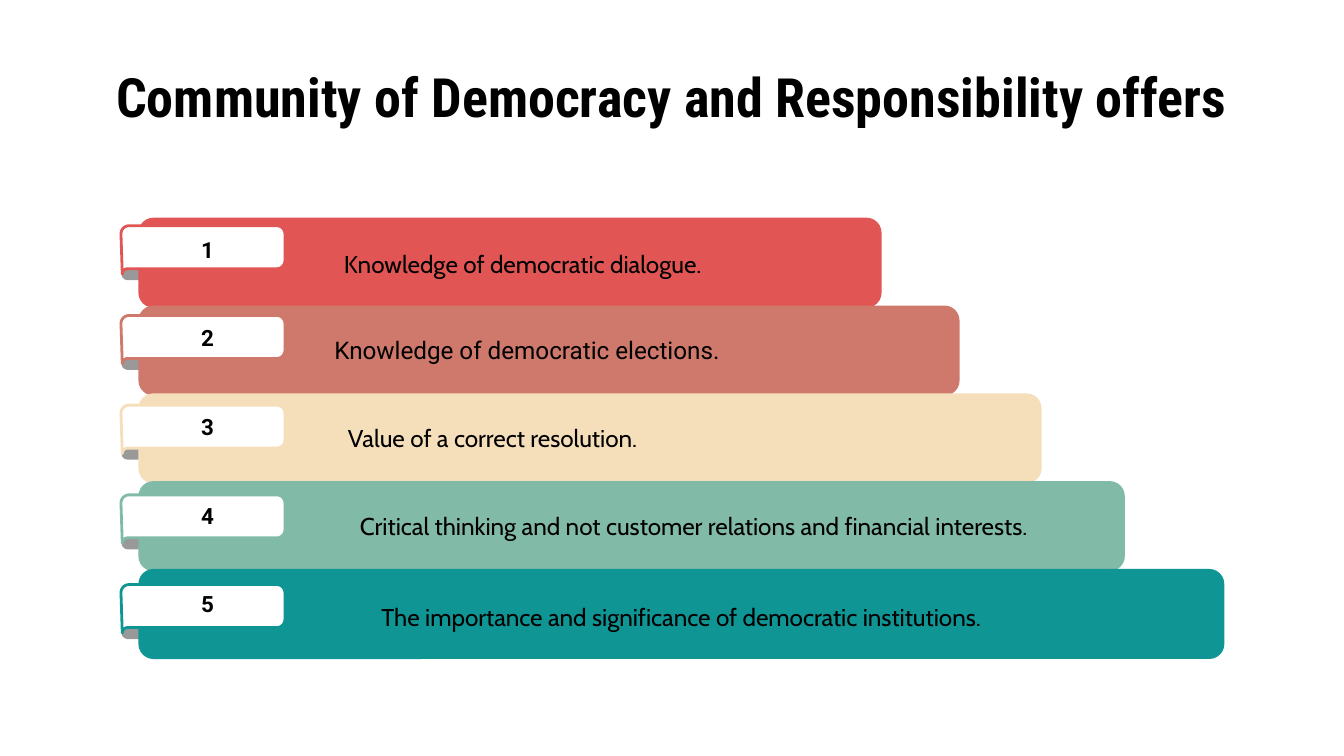
"""Build a slide of five widening, numbered bars under a title."""
from math import cos, radians, sin

from pptx import Presentation
from pptx.dml.color import RGBColor
from pptx.enum.shapes import MSO_SHAPE
from pptx.enum.text import MSO_ANCHOR, MSO_AUTO_SIZE, PP_ALIGN
from pptx.util import Emu, Pt

ROUNDED = MSO_SHAPE.ROUNDED_RECTANGLE
MIDDLE = MSO_ANCHOR.MIDDLE
NO_AUTOFIT = MSO_AUTO_SIZE.NONE
LEFT, CENTER = PP_ALIGN.LEFT, PP_ALIGN.CENTER

BLACK = RGBColor(0x00, 0x00, 0x00)
WHITE = RGBColor(0xFF, 0xFF, 0xFF)
GRAY = RGBColor(0x99, 0x99, 0x99)
RED = RGBColor(0xE1, 0x55, 0x54)
CLAY = RGBColor(0xCE, 0x79, 0x6B)
CREAM = RGBColor(0xF5, 0xDF, 0xBB)
SAGE = RGBColor(0x82, 0xBA, 0xA8)
TEAL = RGBColor(0x0E, 0x95, 0x94)

TITLE = "Community of Democracy and Responsibility offers"
SPACED = {"line_spacing": 1.15, "space_before": Pt(12), "space_after": Pt(12)}
OFFERS = [
    ("Knowledge of democratic dialogue.", RED, 553, 246, 295, "Cabin", SPACED),
    ("Knowledge of democratic elections.", CLAY, 611, 239, 410, "Roboto", {}),
    ("Value of a correct resolution.", CREAM, 672, 249, 406, "Cabin", {}),
    ("Critical thinking and not customer relations and financial interests.",
     SAGE, 734, 258, 652, "Cabin", {}),
    ("The importance and significance of democratic institutions.",
     TEAL, 808, 274, 726, "Cabin", SPACED),
]

PX = 9144
SLIDE_WIDTH, SLIDE_HEIGHT = 1000, 562.5
INSET = 10
BAR_LEFT, BAR_TOP, BAR_STEP, BAR_HEIGHT = 103, 162, 65.35, 67
FOLD_TOP, FOLD_STEP = 200, 66.75
NUMBER_TOP, NUMBER_STEP = 164, 66
OFFER_TOP, OFFER_STEP = 168, 65.5


def px(value):
    return Emu(round(value * PX))


def box(*lengths):
    return [px(length) for length in lengths]


def arc(x, y, radius, start, stop):
    turn = (stop - start) / 6
    angles = [radians(start + turn * step) for step in range(7)]
    return [(px(x + radius * cos(a)), px(y + radius * sin(a))) for a in angles]


def add_outline(slide, points, fill, line, line_width):
    builder = slide.shapes.build_freeform(*points[0])
    builder.add_line_segments(points[1:], close=True)
    shape = builder.convert_to_shape()
    shape.shadow.inherit = False
    shape.fill.solid()
    shape.fill.fore_color.rgb = fill
    shape.line.color.rgb = line
    shape.line.width = Pt(line_width)


def add_fold(slide, top):
    points = arc(95, top + 4, 4, 90, 270) + arc(107, top + 4, 4, -90, 90)
    add_outline(slide, points, GRAY, GRAY, 0.75)


def add_bar(slide, top, width, color):
    bar = slide.shapes.add_shape(ROUNDED, *box(BAR_LEFT, top, width, BAR_HEIGHT))
    bar.adjustments[0] = 0.167
    bar.shadow.inherit = False
    bar.fill.solid()
    bar.fill.fore_color.rgb = color
    bar.line.fill.background()


def add_tab(slide, bottom, color):
    top = bottom - 32
    points = (arc(96, top + 6, 6, 180, 270) + arc(206, top + 6, 6, -90, 0)
              + arc(206, bottom - 6, 6, 0, 90) + arc(95, bottom + 4, 4, 270, 180))
    add_outline(slide, points, WHITE, color, 1.5)


def write(shape, text, font, size, bold=False, alignment=LEFT, spacing=None):
    frame = shape.text_frame
    frame.text = text
    frame_format = {"word_wrap": True, "auto_size": NO_AUTOFIT, "vertical_anchor": MIDDLE}
    for side in ("left", "right", "top", "bottom"):
        frame_format[f"margin_{side}"] = px(INSET)
    paragraph = frame.paragraphs[0]
    run_font = paragraph.runs[0].font
    run_font.color.rgb = BLACK
    for target, values in (
        (frame, frame_format),
        (paragraph, {"alignment": alignment, **(spacing or {})}),
        (run_font, {"name": font, "size": Pt(size), "bold": bold}),
    ):
        for name, value in values.items():
            setattr(target, name, value)


def main():
    presentation = Presentation()
    presentation.slide_width, presentation.slide_height = box(SLIDE_WIDTH, SLIDE_HEIGHT)
    slide = presentation.slides.add_slide(presentation.slide_layouts[5])

    title = slide.shapes.title
    title.left, title.top, title.width, title.height = box(50, 45, 900, 53)
    write(title, TITLE, "Roboto Condensed", 29, True, CENTER)

    for row in range(len(OFFERS)):
        add_fold(slide, FOLD_TOP + row * FOLD_STEP)
    for row, (_, color, bar_width, *_) in enumerate(OFFERS):
        add_bar(slide, BAR_TOP + row * BAR_STEP, bar_width, color)
    for row, (text, color, _, left, width, font, spacing) in enumerate(OFFERS):
        add_tab(slide, FOLD_TOP + row * FOLD_STEP, color)
        number = slide.shapes.add_textbox(
            *box(BAR_LEFT, NUMBER_TOP + row * NUMBER_STEP, 103, 43))
        write(number, str(row + 1), "Roboto", 12, True, CENTER)
        offer = slide.shapes.add_textbox(
            *box(left, OFFER_TOP + row * OFFER_STEP, width, 54))
        write(offer, text, font, 13, spacing=spacing)

    presentation.save("out.pptx")


if __name__ == "__main__":
    main()
